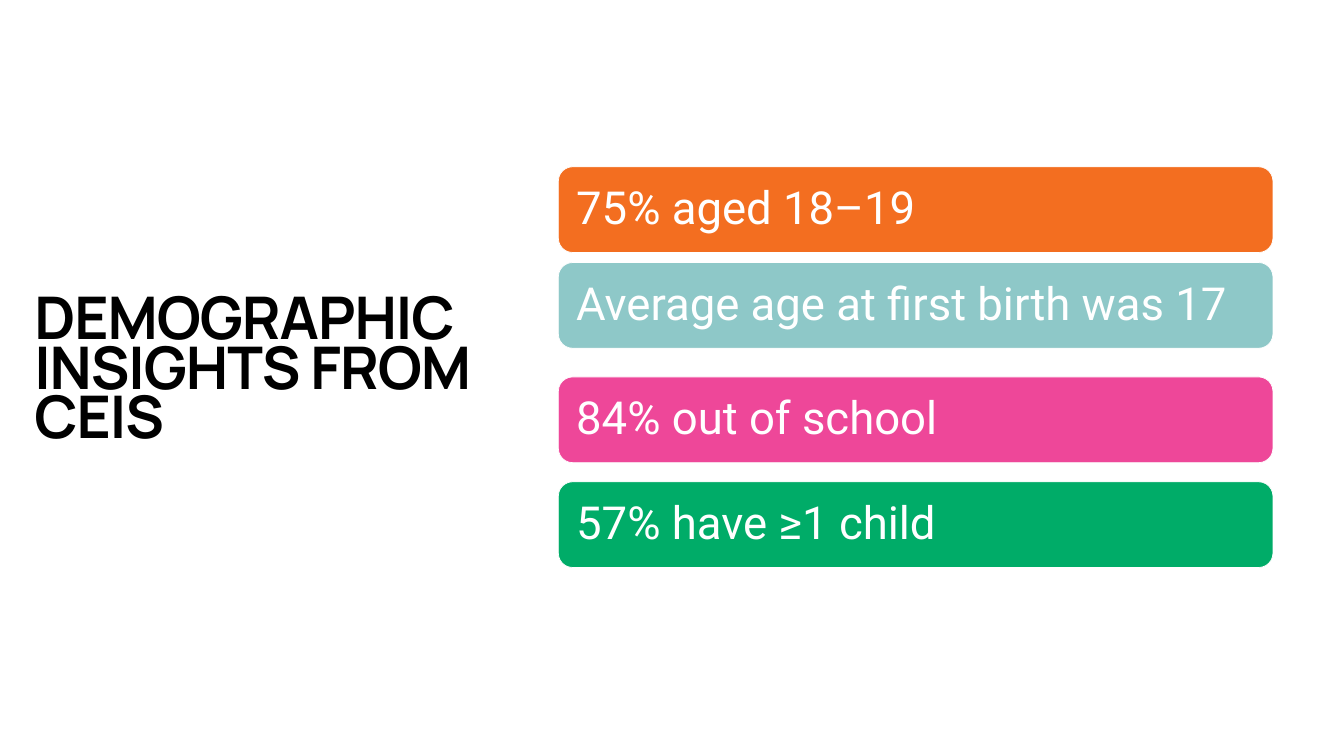
from typing import NamedTuple

from pptx import Presentation
from pptx.dml.color import RGBColor
from pptx.enum.shapes import MSO_SHAPE
from pptx.enum.text import MSO_ANCHOR, PP_ALIGN
from pptx.util import Pt

PX = 9144  # EMU in one px, 100 px to the inch
ROUND = MSO_SHAPE.ROUNDED_RECTANGLE
MIDDLE = MSO_ANCHOR.MIDDLE
LEFT = PP_ALIGN.LEFT

BLACK = RGBColor(0x00, 0x00, 0x00)
WHITE = RGBColor(0xFF, 0xFF, 0xFF)
ORANGE = RGBColor(0xF3, 0x6E, 0x20)
TEAL = RGBColor(0x8E, 0xC8, 0xC8)
PINK = RGBColor(0xEE, 0x47, 0x99)
GREEN = RGBColor(0x00, 0xAC, 0x68)

BAR_X, BAR_W, BAR_H = 1108, 1418, 170
TITLE = "DEMOGRAPHIC INSIGHTS FROM CEIS"
TITLE_FONT = {"name": "Manrope", "size": Pt(84), "bold": True}
BAR_FONT = {"name": "Roboto", "size": Pt(65), "bold": False}


class Bar(NamedTuple):
    top: int
    fill: RGBColor
    text: str


BARS = [
    Bar(331, ORANGE, "75% aged 18–19"),
    Bar(521, TEAL, "Average age at first birth was 17"),
    Bar(748, PINK, "84% out of school"),
    Bar(956, GREEN, "57% have ≥1 child"),
]


def write(shape, text: str, font: dict, color: RGBColor, inset: int, spacing: float):
    """Fill the shape with one left-aligned paragraph and return its run."""
    frame = shape.text_frame
    form = {"word_wrap": True, "vertical_anchor": MIDDLE}
    for side in ("left", "top", "right", "bottom"):
        form[f"margin_{side}"] = inset * PX
    for key, value in form.items():
        setattr(frame, key, value)
    par = frame.paragraphs[0]
    par.alignment = LEFT
    par.line_spacing = spacing
    run = par.add_run()
    run.text = text
    for key, value in font.items():
        setattr(run.font, key, value)
    run.font.color.rgb = color
    return run


def add_title(slide) -> None:
    title = slide.shapes.title
    place = {"left": 58, "top": 130, "width": 994, "height": 1221}
    for key, value in place.items():
        setattr(title, key, value * PX)
    run = write(title, TITLE, TITLE_FONT, BLACK, 10, 0.7)
    title.text_frame.margin_bottom = 5 * PX
    run.font._element.set("spc", "-150")


def add_bar(slide, bar: Bar) -> None:
    shape = slide.shapes.add_shape(
        ROUND, BAR_X * PX, bar.top * PX, BAR_W * PX, BAR_H * PX
    )
    shape.shadow.inherit = False
    shape.fill.solid()
    shape.fill.fore_color.rgb = bar.fill
    shape.line.color.rgb = WHITE
    shape.line.width = Pt(1)
    write(shape, bar.text, BAR_FONT, WHITE, 27, 0.9)


def main() -> None:
    deck = Presentation()
    deck.slide_width = 2667 * PX
    deck.slide_height = 1500 * PX
    slide = deck.slides.add_slide(deck.slide_layouts[5])
    add_title(slide)
    for bar in BARS:
        add_bar(slide, bar)
    deck.save("out.pptx")


if __name__ == "__main__":
    main()
